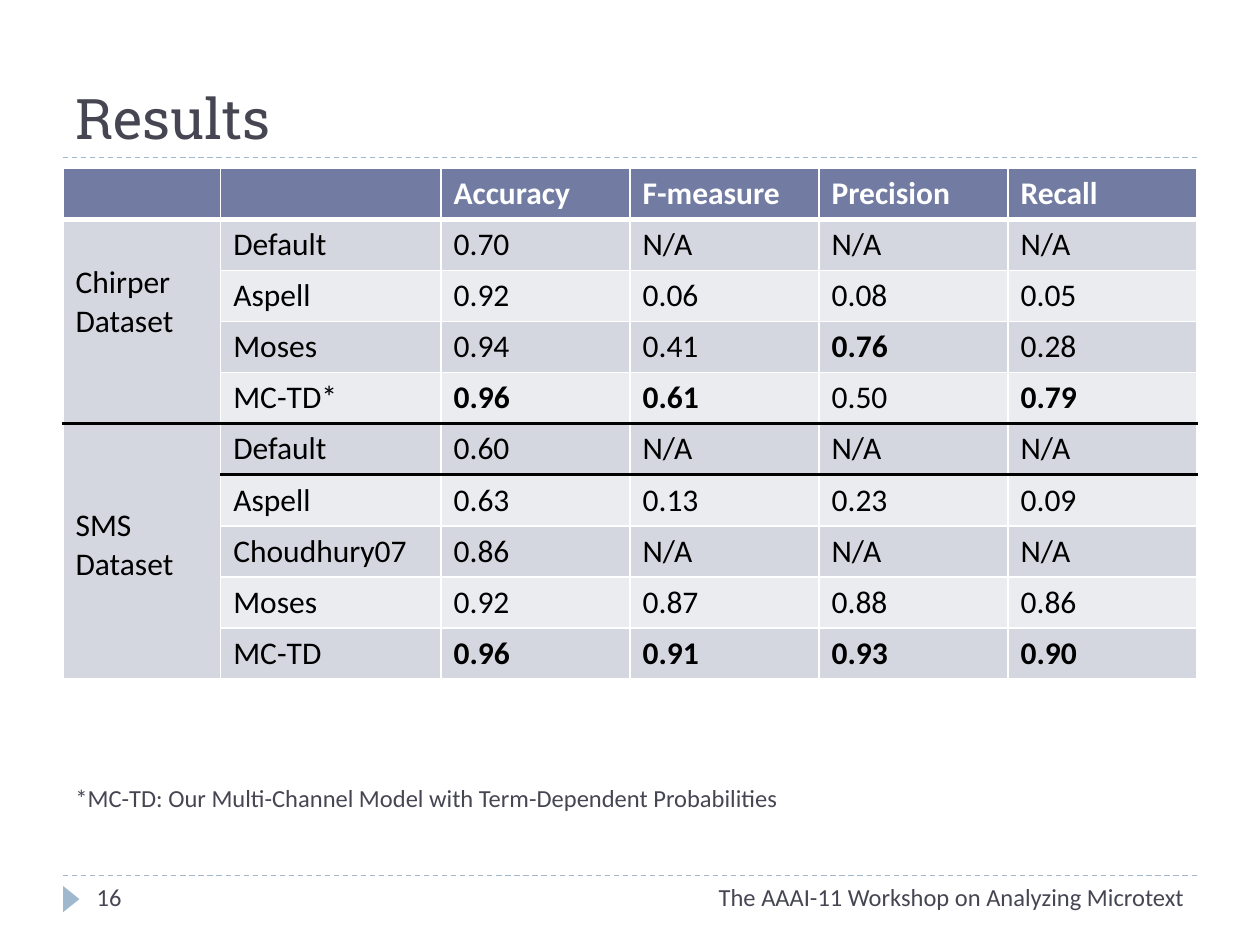
import pptx
import pptx.dml.color
import pptx.enum.dml
import pptx.enum.shapes
import pptx.enum.text
import pptx.oxml
import pptx.oxml.ns
import pptx.util
from lxml import etree

Cm = pptx.util.Cm
Pt = pptx.util.Pt
RGBColor = pptx.dml.color.RGBColor
PP_ALIGN = pptx.enum.text.PP_ALIGN
qn = pptx.oxml.ns.qn

INK = RGBColor(0x46, 0x46, 0x53)
ACCENT = RGBColor(0x9F, 0xB8, 0xCD)
HEADER = RGBColor(0x72, 0x7C, 0xA3)
BAND_DARK = RGBColor(0xD5, 0xD7, 0xE0)
BAND_LIGHT = RGBColor(0xEB, 0xEC, 0xF0)
WHITE = RGBColor(0xFF, 0xFF, 0xFF)
BLACK = RGBColor(0, 0, 0)

LEFT, WIDTH = 1.27, 22.86
ROW_HEIGHT = 1.03
COLUMN_WIDTHS = [3.18, 4.44, 3.81, 3.81, 3.81, 3.81]
ROWS = [
    ["", "", "Accuracy", "F-measure", "Precision", "Recall"],
    ["Chirper Dataset", "Default", "0.70", "N/A", "N/A", "N/A"],
    ["", "Aspell", "0.92", "0.06", "0.08", "0.05"],
    ["", "Moses", "0.94", "0.41", "0.76", "0.28"],
    ["", "MC-TD*", "0.96", "0.61", "0.50", "0.79"],
    ["SMS Dataset", "Default", "0.60", "N/A", "N/A", "N/A"],
    ["", "Aspell", "0.63", "0.13", "0.23", "0.09"],
    ["", "Choudhury07", "0.86", "N/A", "N/A", "N/A"],
    ["", "Moses", "0.92", "0.87", "0.88", "0.86"],
    ["", "MC-TD", "0.96", "0.91", "0.93", "0.90"],
]
BEST = {(3, 4), (4, 2), (4, 3), (4, 5), (9, 2), (9, 3), (9, 4), (9, 5)}
GROUPS = [(1, 4, 0.9), (5, 9, 1.68)]
RULES = {1: (WHITE, 3), 5: (BLACK, 2.25), 6: (BLACK, 2.25)}


def format_text(tf, size, color, font="Calibri", bold=False):
    for p in tf.paragraphs:
        for r in p.runs:
            r.font.name = font
            r.font.size = Pt(size)
            r.font.bold = bold
            r.font.color.rgb = color


def set_title(s, text):
    title = s.shapes.title
    title.left, title.top = Cm(LEFT), Cm(0.43)
    title.width, title.height = Cm(WIDTH), Cm(2.74)
    tf = title.text_frame
    tf.text = text
    tf.vertical_anchor = pptx.enum.text.MSO_ANCHOR.BOTTOM
    tf.paragraphs[0].alignment = PP_ALIGN.LEFT
    format_text(tf, 32, INK, "Roboto Slab")


def add_text(s, text, left, top, width, height, align=PP_ALIGN.LEFT):
    tf = s.shapes.add_textbox(Cm(left), Cm(top), Cm(width), Cm(height)).text_frame
    tf.word_wrap = True
    tf.text = text
    tf.paragraphs[0].alignment = align
    format_text(tf, 14, INK)


def add_dashed_rule(s, y):
    line = s.shapes.add_connector(
        pptx.enum.shapes.MSO_CONNECTOR.STRAIGHT, Cm(LEFT), Cm(y), Cm(LEFT + WIDTH), Cm(y))
    line.line.color.rgb = ACCENT
    line.line.width = Pt(0.75)
    line.line.dash_style = pptx.enum.dml.MSO_LINE.DASH
    etree.SubElement(line._element.spPr, qn("a:effectLst"))


def add_page_marker(s):
    marker = s.shapes.add_shape(
        pptx.enum.shapes.MSO_SHAPE.ISOSCELES_TRIANGLE, Cm(1.17), Cm(17.96), Cm(0.53), Cm(0.33))
    marker.rotation = 90
    marker.shadow.inherit = False
    marker.fill.solid()
    marker.fill.fore_color.rgb = ACCENT
    marker.line.fill.background()


def set_borders(cell, top, bottom):
    side = (WHITE, 1)
    borders = {"a:lnL": side, "a:lnR": side, "a:lnT": top, "a:lnB": bottom}
    tcPr = cell._tc.get_or_add_tcPr()
    for i, (tag, (color, width)) in enumerate(borders.items()):
        ln = pptx.oxml.ns.qn(tag)
        ln = etree.Element(ln, w=str(Pt(width)))
        fill = etree.SubElement(ln, qn("a:solidFill"))
        etree.SubElement(fill, qn("a:srgbClr"), val=str(color))
        tcPr.insert(i, ln)


def band_color(row, column):
    if row == 0:
        return HEADER
    return BAND_DARK if column == 0 or row % 2 else BAND_LIGHT


def add_results_table(s):
    table = s.shapes.add_table(
        len(ROWS), len(COLUMN_WIDTHS), Cm(LEFT), Cm(3.39),
        Cm(WIDTH), Cm(ROW_HEIGHT * len(ROWS))).table
    for column, width in zip(table.columns, COLUMN_WIDTHS):
        column.width = Cm(width)
    for i, values in enumerate(ROWS):
        table.rows[i].height = Cm(ROW_HEIGHT)
        for j, value in enumerate(values):
            cell = table.cell(i, j)
            cell.text = value
            format_text(cell.text_frame, 18, BLACK if i else WHITE,
                        bold=i == 0 or (i, j) in BEST)
            if not value:
                cell.text_frame.paragraphs[0].font.size = Pt(18)
            cell.fill.solid()
            cell.fill.fore_color.rgb = band_color(i, j)
            rules = {1: RULES[1], 5: RULES[5]} if j == 0 else RULES
            set_borders(cell, rules.get(i, (WHITE, 1)), rules.get(i + 1, (WHITE, 1)))
    for first, last, margin in GROUPS:
        group = table.cell(first, 0)
        group.merge(table.cell(last, 0))
        group.margin_top = Cm(margin)


def main():
    prs = pptx.Presentation()
    prs.slide_width, prs.slide_height = Cm(25.4), Cm(19.05)
    s = prs.slides.add_slide(prs.slide_layouts[5])
    add_dashed_rule(s, 17.65)
    add_dashed_rule(s, 3.18)
    add_page_marker(s)
    set_title(s, "Results")
    add_results_table(s)
    add_text(s, "16", 1.7, 17.65, 5.5, 1.02)
    add_text(s, "The AAAI-11 Workshop on Analyzing Microtext",
             13.77, 17.65, 10.36, 1.02, PP_ALIGN.RIGHT)
    add_text(s, "*MC-TD: Our Multi-Channel Model with Term-Dependent Probabilities",
             LEFT, 15.67, WIDTH, 1.9)
    prs.save("out.pptx")


if __name__ == "__main__":
    main()
